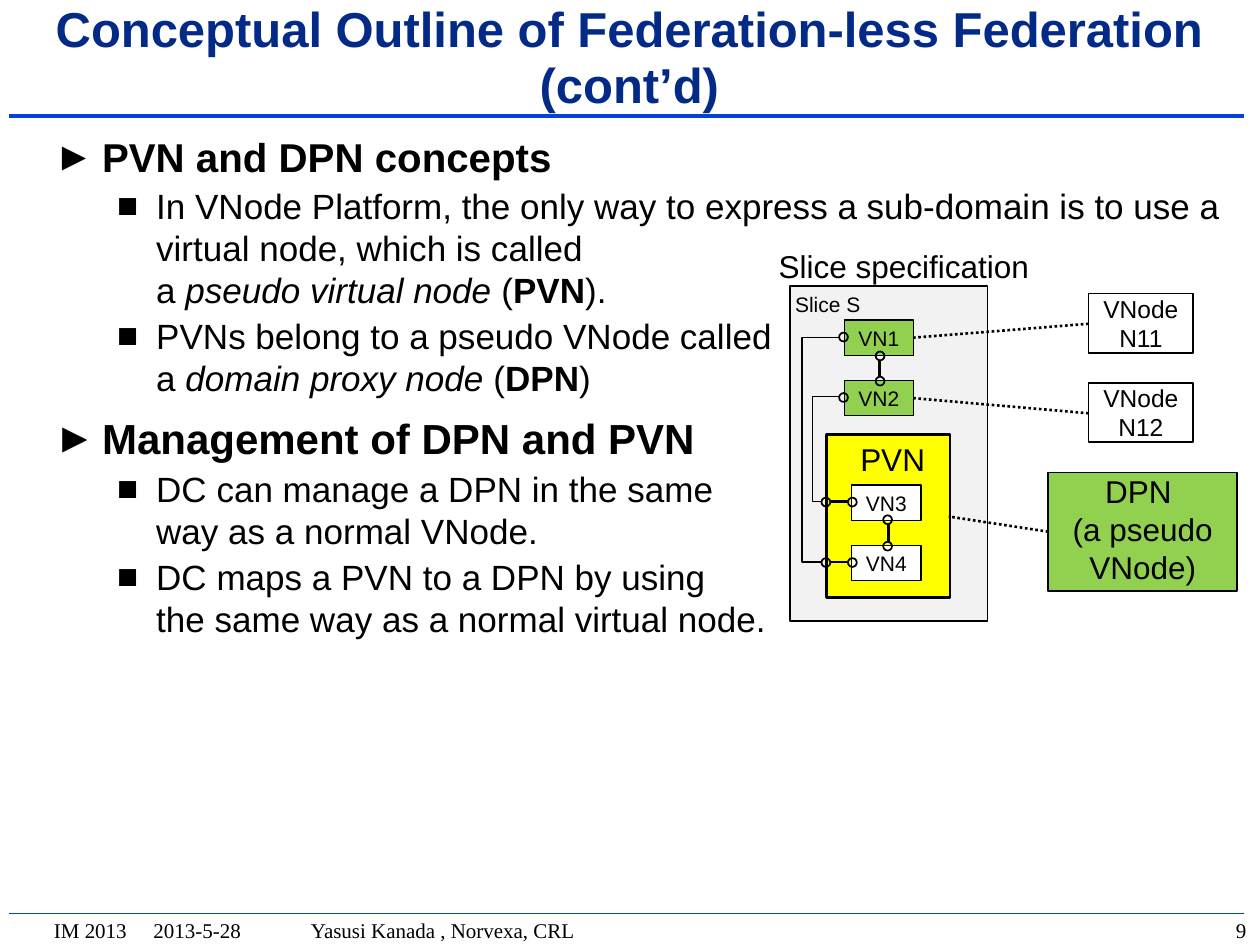
"""Build the slide on PVN and DPN concepts with its slice diagram."""
from lxml import etree
from pptx import Presentation
from pptx.dml.color import RGBColor
from pptx.enum import dml, shapes, text
from pptx.oxml import ns
from pptx.util import Inches, Pt

BLACK = RGBColor(0x00, 0x00, 0x00)
WHITE = RGBColor(0xFF, 0xFF, 0xFF)
NAVY = RGBColor(0x03, 0x2A, 0x87)
BLUE = RGBColor(0x03, 0x42, 0xD8)
GRAY = RGBColor(0xF2, 0xF2, 0xF2)
GREEN = RGBColor(0x92, 0xD0, 0x50)
YELLOW = RGBColor(0xFF, 0xFF, 0x00)
TOP = text.MSO_ANCHOR.TOP
MIDDLE = text.MSO_ANCHOR.MIDDLE
LEFT = text.PP_ALIGN.LEFT
CENTER = text.PP_ALIGN.CENTER
RIGHT = text.PP_ALIGN.RIGHT
STRAIGHT = shapes.MSO_CONNECTOR.STRAIGHT
ELBOW = shapes.MSO_CONNECTOR.ELBOW

presentation = Presentation()
presentation.slide_width = Inches(10)
presentation.slide_height = Inches(7.5)
slide = presentation.slides.add_slide(presentation.slide_layouts[1])


def add_box(label, left, top, width, height, fill, size, line=0.75,
            align=CENTER, anchor=TOP, inset=0.04, inset_top=0.04, spacing=1.0):
    shape = slide.shapes.add_shape(shapes.MSO_SHAPE.RECTANGLE, Inches(left),
                                   Inches(top), Inches(width), Inches(height))
    shape.shadow.inherit = False
    shape.fill.solid()
    shape.fill.fore_color.rgb = fill
    if line:
        shape.line.color.rgb = BLACK
        shape.line.width = Pt(line)
    else:
        shape.line.fill.background()
    frame = shape.text_frame
    frame.word_wrap = True
    frame.vertical_anchor = anchor
    frame.margin_left = frame.margin_right = frame.margin_bottom = Inches(inset)
    frame.margin_top = Inches(inset_top)
    for index, words in enumerate(label.split("\n")):
        paragraph = frame.add_paragraph() if index else frame.paragraphs[0]
        paragraph.alignment = align
        paragraph.line_spacing = spacing
        run = paragraph.add_run()
        run.text = words
        run.font.name = "Arial"
        run.font.size = Pt(size)
        run.font.color.rgb = BLACK


def add_line(start, end, width, color=BLACK, kind=STRAIGHT):
    connector = slide.shapes.add_connector(
        kind, Inches(start[0]), Inches(start[1]), Inches(end[0]), Inches(end[1]))
    connector.line.color.rgb = color
    connector.line.width = Pt(width)
    etree.SubElement(connector.element.spPr, ns.qn("a:effectLst"))
    return connector


for y, width in [(0.92, 2), (7.25, 1)]:
    add_line((0.07, y), (9.87, y), width, BLUE)

for words, left, width, align in [
        ("IM 2013\t2013-5-28\tYasusi Kanada , Norvexa, CRL", 0.33, 9.0, LEFT),
        ("9", 9.33, 0.66, RIGHT)]:
    box = slide.shapes.add_textbox(Inches(left), Inches(7.23), Inches(width), Inches(0.3))
    box.text_frame.word_wrap = True
    paragraph = box.text_frame.paragraphs[0]
    paragraph.alignment = align
    run = paragraph.add_run()
    run.text = words
    run.font.name = "Times New Roman"
    run.font.size = Pt(12)
    run.font.color.rgb = BLACK
    if "\t" in words:
        tabs = etree.SubElement(paragraph._p.get_or_add_pPr(), ns.qn("a:tabLst"))
        for stop in (0.79, 2.04):
            etree.SubElement(tabs, ns.qn("a:tab"), pos=str(Inches(stop)), algn="l")

title = slide.shapes.title
title.left, title.top = Inches(0.33), Inches(0.18)
title.width, title.height = Inches(9.33), Inches(0.58)
title.text_frame.auto_size = text.MSO_AUTO_SIZE.NONE
title.text_frame.vertical_anchor = MIDDLE
paragraph = title.text_frame.paragraphs[0]
paragraph.alignment = CENTER
paragraph.line_spacing = 0.95
run = paragraph.add_run()
run.text = "Conceptual Outline of Federation-less Federation (cont’d)"
run.font.name = "Arial"
run.font.size = Pt(28)
run.font.bold = True
run.font.color.rgb = NAVY

body = slide.placeholders[1]
body.left, body.top = Inches(0.33), Inches(1)
body.width, body.height = Inches(9.47), Inches(4.25)
body.text_frame.auto_size = text.MSO_AUTO_SIZE.NONE
level_styles = [("►", 0.38, 0.38, 8), ("■", 0.81, 0.31, 2.3)]
outline = [
    (0, 23, [("PVN and DPN concepts", "b")]),
    (1, 20, [("In VNode Platform, the only way to express a sub-domain is to use a "
              "virtual node, which is called \na ", ""),
             ("pseudo virtual node", "i"), (" (", ""), ("PVN", "b"), (").", "")]),
    (1, 20, [("PVNs belong to a pseudo VNode called \na ", ""),
             ("domain proxy node ", "i"), ("(", ""), ("DPN", "b"), (")", "")]),
    (0, 24, [("Management of DPN and PVN", "b")]),
    (1, 20, [("DC can manage a DPN in the same \nway as a normal VNode.", "")]),
    (1, 20, [("DC maps a PVN to a DPN by using \n"
              "the same way as a normal virtual node.", "")]),
]
for index, (level, size, runs) in enumerate(outline):
    paragraph = body.text_frame.add_paragraph() if index else body.text_frame.paragraphs[0]
    bullet, margin, hanging, before = level_styles[level]
    paragraph.level = level
    paragraph.alignment = LEFT
    paragraph.space_before = Pt(before)
    properties = paragraph._p.get_or_add_pPr()
    properties.set("marL", str(Inches(margin)))
    properties.set("indent", str(-Inches(hanging)))
    etree.SubElement(properties, ns.qn("a:buChar"), char=bullet)
    for words, style in runs:
        for part, segment in enumerate(words.split("\n")):
            if part:
                paragraph.add_line_break()
            run = paragraph.add_run()
            run.text = segment
            run.font.name = "Arial"
            run.font.size = Pt(size)
            run.font.color.rgb = BLACK
            run.font.bold = style == "b"
            run.font.italic = style == "i"

add_box("Slice S", 6.27, 2.27, 1.57, 2.66, GRAY, 12, align=LEFT)
add_box("Slice specification", 6.18, 2.02, 2.2, 0.24, WHITE, 18, line=0,
        align=LEFT, inset=0, inset_top=0, spacing=0.8)
add_box(" PVN", 6.56, 3.45, 0.98, 1.29, YELLOW, 18, line=1.5)
for label, left, top, fill in [("VN1", 6.7, 2.54, GREEN), ("VN2", 6.7, 3.02, GREEN),
                               ("VN3", 6.76, 3.85, WHITE), ("VN4", 6.76, 4.33, WHITE)]:
    add_box(label, left, top, 0.55, 0.28, fill, 12)

for left, top in [(6.73, 3.95), (6.73, 4.43), (6.52, 3.95), (6.52, 4.43), (6.66, 2.64),
                  (6.66, 3.12), (6.95, 2.79), (6.95, 2.99), (7.01, 4.09), (7.01, 4.3)]:
    port = slide.shapes.add_shape(shapes.MSO_SHAPE.OVAL, Inches(left), Inches(top),
                                  Inches(0.07), Inches(0.07))
    port.shadow.inherit = False
    port.fill.background()
    port.line.color.rgb = BLACK
    port.line.width = Pt(1)

for start, end in [((7.05, 4.16), (7.05, 4.3)), ((6.98, 2.86), (6.98, 2.99)),
                   ((6.59, 3.98), (6.73, 3.98)), ((6.59, 4.46), (6.73, 4.46))]:
    add_line(start, end, 1.5)

for start_y, end_y, bend in [(2.68, 4.46, 209300), (3.15, 3.98, 148600)]:
    link = add_line((6.66, start_y), (6.52, end_y), 0.75, kind=ELBOW)
    guides = link.element.spPr.find(ns.qn("a:prstGeom")).find(ns.qn("a:avLst"))
    etree.SubElement(guides, ns.qn("a:gd"), name="adj1", fmla=f"val {bend}")

add_box("DPN \n(a pseudo VNode)", 8.32, 3.75, 1.5, 0.94, GREEN, 18, line=1,
        anchor=MIDDLE, inset_top=0)
for label, top in [("VNode N11", 2.33), ("VNode N12", 3.04)]:
    add_box(label, 8.64, top, 0.83, 0.47, WHITE, 14, line=1, inset_top=0)

for start, end in [((8.64, 2.57), (7.25, 2.68)), ((8.64, 3.28), (7.25, 3.16)),
                   ((8.32, 4.22), (7.53, 4.1))]:
    mapping = add_line(start, end, 1.5)
    mapping.line.dash_style = dml.MSO_LINE.ROUND_DOT

presentation.save("out.pptx")
